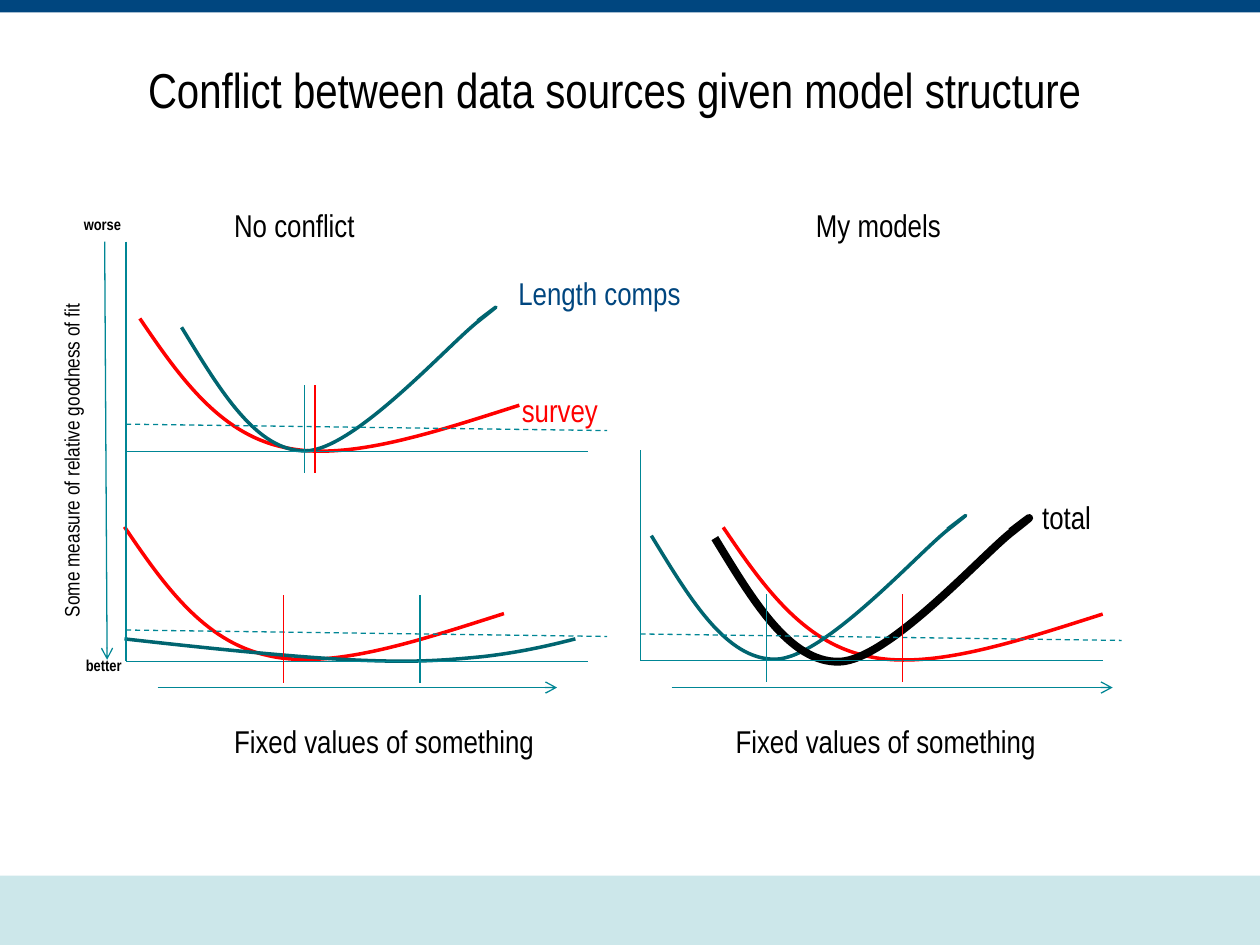
from lxml import etree
from pptx import Presentation
from pptx.dml.color import RGBColor
from pptx.enum.dml import MSO_LINE
from pptx.enum.shapes import MSO_CONNECTOR, MSO_SHAPE
from pptx.enum.text import MSO_ANCHOR, MSO_AUTO_SIZE, PP_ALIGN
from pptx.oxml.ns import qn
from pptx.util import Cm, Pt

RECTANGLE = MSO_SHAPE.RECTANGLE
STRAIGHT = MSO_CONNECTOR.STRAIGHT
DASH = MSO_LINE.DASH
TOP = MSO_ANCHOR.TOP
LEFT = PP_ALIGN.LEFT
FIT_SHAPE = MSO_AUTO_SIZE.SHAPE_TO_FIT_TEXT

FONT = "Arial Narrow"
BLACK, RED, NAVY = "000000", "FF0000", "00467F"
TEAL, DARK_TEAL, PALE_TEAL = "008695", "006570", "CCE7EA"

# Bezier points of each curve in cm, relative to its start
SURVEY = [(0, 0), (0.79, 1.17), (1.6, 2.31), (2.87, 2.59),
          (4.14, 2.9), (5.89, 2.31), (7.65, 1.75)]
LENGTH = [(0, 0), (0.76, 1.24), (1.5, 2.51), (2.51, 2.49), (3.51, 2.46),
          (5.44, 0.28), (6.02, -0.15), (6.6, -0.61), (6.27, -0.36), (5.97, -0.13)]
FLAT = [(0, 0), (-0.58, 0.15), (-1.17, 0.28), (-1.88, 0.36), (-2.62, 0.43),
        (-3.18, 0.48), (-4.37, 0.43), (-5.56, 0.38), (-7.32, 0.2), (-9.09, 0)]
STEPS = 20

# Panels: box corner, threshold height, markers, and curves with start, colour, width
AXIS_WIDTH, AXIS_HEIGHT = 9.32, 4.23
PANELS = [
    dict(left=2.54, top=4.87, threshold=3.68, markers=[(3.6, TEAL), (3.81, RED)],
         curves=[(SURVEY, 0.28, 1.55, RED, 2), (LENGTH, 1.12, 1.73, DARK_TEAL, 2)]),
    dict(left=2.54, top=9.1, threshold=3.6, markers=[(5.93, TEAL), (3.18, RED)],
         curves=[(SURVEY, -0.03, 1.52, RED, 2), (FLAT, 9.06, 3.78, DARK_TEAL, 2)]),
    dict(left=12.91, top=9.08, threshold=3.7, markers=[(2.54, TEAL), (5.29, RED)],
         curves=[(SURVEY, 1.67, 1.55, RED, 2), (LENGTH, 0.22, 1.72, DARK_TEAL, 2),
                 (LENGTH, 1.5, 1.77, BLACK, 4.5)]),
]


def colour(value):
    return RGBColor.from_string(value)


def write(box, text, size=18, ink=BLACK, bold=False):
    frame = box.text_frame
    frame.word_wrap = False
    frame.auto_size = FIT_SHAPE
    frame.vertical_anchor = TOP
    para = frame.paragraphs[0]
    para.alignment = LEFT
    span = para.add_run()
    span.text = text
    span.font.name = FONT
    span.font.size = Pt(size)
    span.font.bold = bold
    span.font.color.rgb = colour(ink)


def add_label(page, text, left, top, width, height=1.02, rotation=0, **text_format):
    box = page.shapes.add_textbox(Cm(left), Cm(top), Cm(width), Cm(height))
    box.rotation = rotation
    write(box, text, **text_format)


def add_line(page, start, end, ink=TEAL, dash=None, arrow=False):
    line = page.shapes.add_connector(STRAIGHT, Cm(start[0]), Cm(start[1]),
                                     Cm(end[0]), Cm(end[1]))
    line.line.color.rgb = colour(ink)
    line.line.width = Pt(0.75)
    if dash:
        line.line.dash_style = dash
    if arrow:
        etree.SubElement(line.line._get_or_add_ln(), qn("a:tailEnd"), type="arrow")
    etree.SubElement(line._element.spPr, qn("a:effectLst"))


def bezier_points(points):
    """Sample a chain of cubic Bezier segments, to find its extent."""
    for first in range(0, len(points) - 1, 3):
        corners = points[first:first + 4]
        for step in range(1, STEPS + 1):
            t = step / STEPS
            weights = ((1 - t) ** 3, 3 * t * (1 - t) ** 2, 3 * t ** 2 * (1 - t), t ** 3)
            yield tuple(sum(w * corner[axis] for w, corner in zip(weights, corners))
                        for axis in (0, 1))


def bend(curve, points):
    """Replace the straight segments of a freeform by cubic ones."""
    outline = next(curve._element.iter(qn("a:path")))
    for segment in outline.findall(qn("a:lnTo")):
        outline.remove(segment)
    for index, (x, y) in enumerate(points[1:]):
        if index % 3 == 0:
            segment = etree.SubElement(outline, qn("a:cubicBezTo"))
        etree.SubElement(segment, qn("a:pt"), x=str(x - curve.left), y=str(y - curve.top))


def add_curve(page, points, left, top, ink, width):
    builder = page.shapes.build_freeform(Cm(left), Cm(top))
    builder.add_line_segments([(Cm(left + x), Cm(top + y))
                               for x, y in bezier_points(points)], close=False)
    curve = builder.convert_to_shape()
    bend(curve, [(Cm(left + x), Cm(top + y)) for x, y in points])
    curve.shadow.inherit = False
    curve.fill.background()
    curve.line.color.rgb = colour(ink)
    curve.line.width = Pt(width)


def add_panel(page, left, top, threshold, markers, curves):
    bottom, right = top + AXIS_HEIGHT, left + AXIS_WIDTH
    # Curves
    for points, x, y, ink, width in curves:
        add_curve(page, points, left + x, top + y, ink, width)
    # Axes
    add_line(page, (left, top), (left, bottom))
    add_line(page, (left, bottom), (right, bottom))
    # Threshold and minimum markers
    add_line(page, (left, top + threshold), (left + 9.7, top + threshold + 0.13), dash=DASH)
    for x, ink in markers:
        add_line(page, (left + x, top + 2.9), (left + x, top + 4.66), ink=ink)


def add_band(page, top, height, fill):
    band = page.shapes.add_shape(RECTANGLE, 0, Cm(top), Cm(25.4), Cm(height))
    band.shadow.inherit = False
    band.fill.solid()
    band.fill.fore_color.rgb = colour(fill)
    band.line.fill.background()


def add_title(page, text, left, top, width, height):
    title = page.shapes.title
    title.left, title.top = Cm(left), Cm(top)
    title.width, title.height = Cm(width), Cm(height)
    write(title, text, size=28)


def add_horizontal_axis(page, left, right, label_left):
    add_line(page, (left, 13.86), (right, 13.86), arrow=True)
    add_label(page, "Fixed values of something", label_left, 14.43, 6.63)


def add_fit_scale(page, left, top):
    add_line(page, (left, top), (left + 0.05, top + 8.43), arrow=True)
    add_label(page, "worse", left - 0.67, top - 0.66, 1.32, 0.64, size=9, bold=True)
    add_label(page, "better", left - 0.63, top + 8.23, 1.35, 0.64, size=9, bold=True)
    add_label(page, "Some measure of relative goodness of fit", left - 4.48, top + 3.63,
              7.62, 0.76, rotation=270, size=12)


def main():
    deck = Presentation()
    deck.slide_width, deck.slide_height = Cm(25.4), Cm(19.05)
    page = deck.slides.add_slide(deck.slide_layouts[5])

    # Frame and title
    add_band(page, 17.65, 1.4, PALE_TEAL)
    add_band(page, 0, 0.25, NAVY)
    add_title(page, "Conflict between data sources given model structure",
              2.73, 1.07, 19.51, 1.45)

    # Diagrams
    for panel in PANELS:
        add_panel(page, **panel)
    add_horizontal_axis(page, 3.18, 11.23, 4.47)
    add_horizontal_axis(page, 13.54, 22.43, 14.58)
    add_fit_scale(page, 2.11, 4.87)

    # Headings and curve names
    add_label(page, "No conflict", 4.47, 4.02, 3.33)
    add_label(page, "My models", 16.2, 4.02, 3.4)
    add_label(page, "Length comps", 10.2, 5.39, 4.14, ink=NAVY)
    add_label(page, "survey", 10.27, 7.76, 2.21, ink=RED)
    add_label(page, "total", 20.76, 9.92, 1.5)

    deck.save("out.pptx")


if __name__ == "__main__":
    main()
